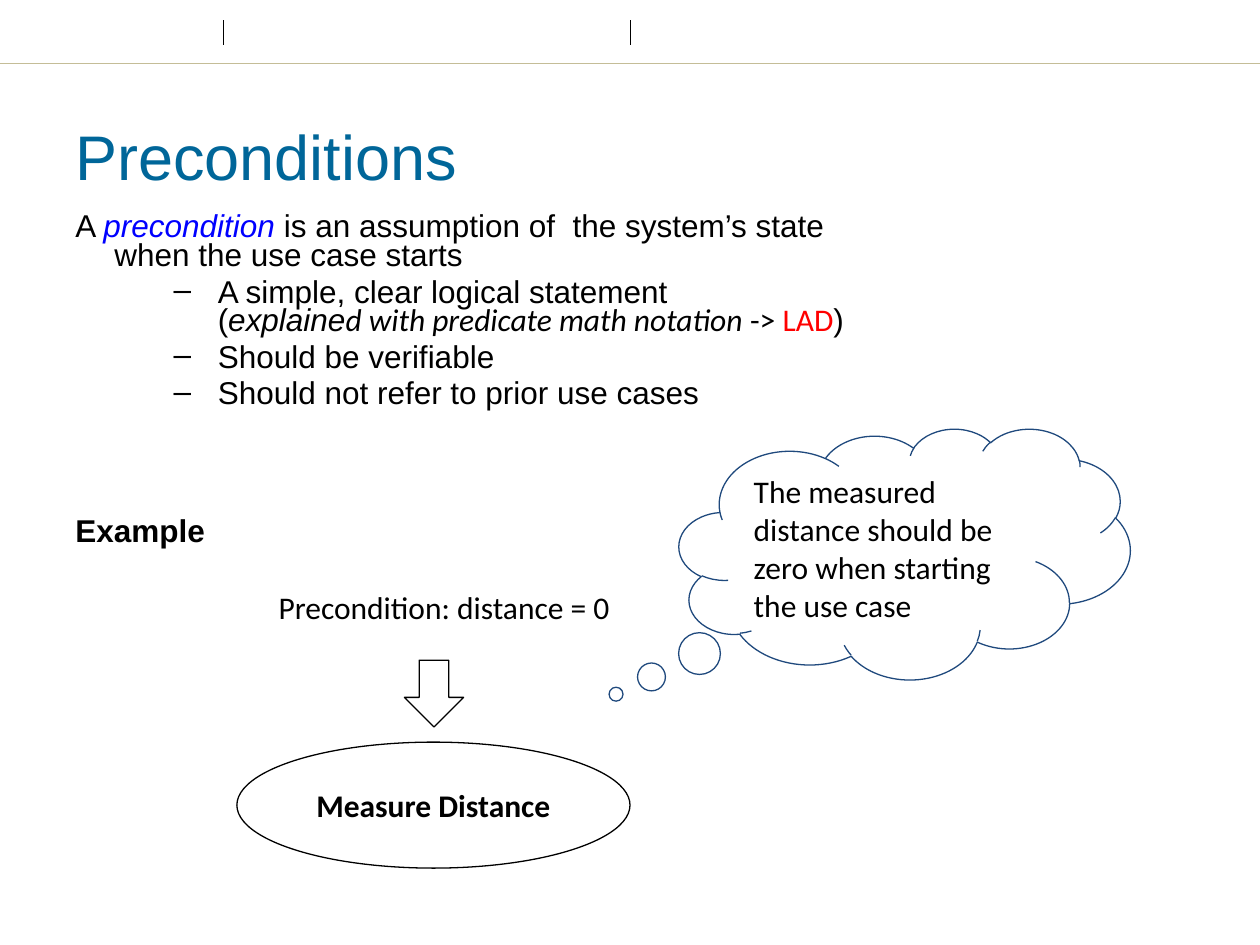
from dataclasses import dataclass
from typing import Optional

from lxml.etree import SubElement
from pptx import Presentation
from pptx.dml.color import RGBColor
from pptx.enum.shapes import MSO_CONNECTOR, MSO_SHAPE
from pptx.enum.text import MSO_ANCHOR, PP_ALIGN
from pptx.oxml.ns import qn
from pptx.util import Inches, Pt

COLUMNS, ROWS = 100, 75
SLIDE_WIDTH, SLIDE_HEIGHT = Inches(10), Inches(7.5)

BLACK = RGBColor(0x00, 0x00, 0x00)
TITLE_BLUE = RGBColor(0x00, 0x66, 0x99)
TERM_BLUE = RGBColor(0x00, 0x00, 0xFF)
RED = RGBColor(0xFF, 0x00, 0x00)
CLOUD_BLUE = RGBColor(0x1F, 0x49, 0x7D)
RULE_TAN = RGBColor(0xC4, 0xBD, 0x97)


@dataclass(frozen=True)
class Box:
    """A rectangle in grid columns and rows."""
    left: float
    top: float
    width: float
    height: float

    def lengths(self) -> tuple:
        return (across(self.left), down(self.top),
                across(self.width), down(self.height))


@dataclass(frozen=True)
class Run:
    text: str
    font: str = "Arial"
    size: float = 18
    color: RGBColor = BLACK
    bold: bool = False
    italic: bool = False


@dataclass(frozen=True)
class Rule:
    start: tuple
    end: tuple
    color: RGBColor
    weight: float


@dataclass(frozen=True)
class Outline:
    """An unfilled shape with an optional label."""
    kind: MSO_SHAPE
    box: Box
    color: RGBColor = BLACK
    adjustments: tuple = ()
    label: Optional[Run] = None
    align: PP_ALIGN = PP_ALIGN.LEFT
    inset: float = 0.05


def across(columns: float) -> int:
    return round(SLIDE_WIDTH * columns / COLUMNS)


def down(rows: float) -> int:
    return round(SLIDE_HEIGHT * rows / ROWS)


def write_paragraph(paragraph, runs, *, align=PP_ALIGN.LEFT, margin=0.0, hanging=0.0,
                    line_spacing=1.0, space_before=0.0, bullet="") -> None:
    """Write runs; a newline inside a run becomes a line break."""
    paragraph.alignment = align
    paragraph.line_spacing = line_spacing
    paragraph.space_before = Pt(space_before)
    properties = paragraph._p.get_or_add_pPr()
    properties.set("marL", str(Inches(margin)))
    properties.set("indent", str(-Inches(hanging)))
    if bullet:
        paragraph.level = 1
        color = SubElement(properties, qn("a:buClr"))
        SubElement(color, qn("a:srgbClr"), val=str(BLACK))
        SubElement(properties, qn("a:buFont"), typeface="Arial")
        SubElement(properties, qn("a:buChar"), char=bullet)
    else:
        SubElement(properties, qn("a:buNone"))
    for item in runs:
        for number, line in enumerate(item.text.split("\n")):
            if number:
                paragraph.add_line_break()
            run = paragraph.add_run()
            run.text = line
            run.font.name = item.font
            run.font.size = Pt(item.size)
            run.font.color.rgb = item.color
            run.font.bold = item.bold
            run.font.italic = item.italic


def prepare_frame(shape, anchor: MSO_ANCHOR, inset: float = 0.05):
    frame = shape.text_frame
    frame.word_wrap = True
    frame.vertical_anchor = anchor
    frame.margin_left = frame.margin_right = Inches(0.1)
    frame.margin_top = frame.margin_bottom = Inches(inset)
    return frame


def add_text(slide, box: Box, *runs: Run, anchor=MSO_ANCHOR.TOP, **layout):
    frame = prepare_frame(slide.shapes.add_textbox(*box.lengths()), anchor)
    write_paragraph(frame.paragraphs[0], runs, **layout)
    return frame


def add_rule(slide, rule: Rule) -> None:
    (x1, y1), (x2, y2) = rule.start, rule.end
    connector = slide.shapes.add_connector(
        MSO_CONNECTOR.STRAIGHT, across(x1), down(y1), across(x2), down(y2))
    connector.line.color.rgb = rule.color
    connector.line.width = Pt(rule.weight)
    SubElement(connector._element.spPr, qn("a:effectLst"))


def add_outline(slide, outline: Outline) -> None:
    shape = slide.shapes.add_shape(outline.kind, *outline.box.lengths())
    shape.shadow.inherit = False
    shape.fill.background()
    shape.line.color.rgb = outline.color
    shape.line.width = Pt(0.75)
    for number, value in enumerate(outline.adjustments):
        shape.adjustments[number] = value
    if outline.label:
        frame = prepare_frame(shape, MSO_ANCHOR.MIDDLE, outline.inset)
        write_paragraph(frame.paragraphs[0], [outline.label], align=outline.align)


RULES = [Rule((0, 5), (COLUMNS, 5), RULE_TAN, 0.25)] + [
    Rule((column, 1.6), (column, 3.6), BLACK, 0.5) for column in (17.7, 50)]

DEFINITION = [
    Run("A "),
    Run("precondition", color=TERM_BLUE, italic=True),
    Run(" is an assumption of  the system’s state \nwhen the use case starts"),
]

QUALITIES = [
    [Run("A simple, clear logical statement \n("),
     Run("explaine", italic=True),
     Run("d with predicate math notation", font="Calibri", italic=True),
     Run(" -> ", font="Calibri"),
     Run("LAD", font="Calibri", color=RED),
     Run(")")],
    [Run("Should be verifiable")],
    [Run("Should not refer to prior use cases")],
]

OUTLINES = [
    Outline(MSO_SHAPE.OVAL, Box(18.8, 58.9, 31.2, 10), align=PP_ALIGN.CENTER,
            label=Run("Measure Distance", font="Calibri", bold=True)),
    Outline(MSO_SHAPE.DOWN_ARROW, Box(32.1, 52.4, 4.7, 5.3), adjustments=(0.5, 0.5)),
    Outline(MSO_SHAPE.CLOUD_CALLOUT, Box(53.9, 34, 35.8, 19.9), CLOUD_BLUE,
            adjustments=(-0.64, 0.56), inset=0.1,
            label=Run("The measured distance should be zero when starting the use case",
                      font="Calibri")),
]


def main() -> None:
    presentation = Presentation()
    presentation.slide_width, presentation.slide_height = SLIDE_WIDTH, SLIDE_HEIGHT
    slide = presentation.slides.add_slide(presentation.slide_layouts[6])

    for rule in RULES:
        add_rule(slide, rule)
    add_text(slide, Box(5, 7.6, 90, 9.4), Run("Preconditions", size=36, color=TITLE_BLUE),
             anchor=MSO_ANCHOR.MIDDLE)
    body = add_text(slide, Box(5, 16.6, 88.9, 20.7), *DEFINITION,
                    margin=0.31, hanging=0.31, line_spacing=0.75)
    for quality in QUALITIES:
        write_paragraph(body.add_paragraph(), quality, margin=1.13, hanging=0.35,
                        line_spacing=0.75, space_before=4.8, bullet="–")
    add_text(slide, Box(5, 40.1, 15.9, 3.8), Run("Example", bold=True))
    add_text(slide, Box(15.2, 46.2, 40.1, 4.6),
             Run("Precondition: distance = 0", font="Calibri"),
             align=PP_ALIGN.CENTER, margin=0.5, hanging=0.5)
    for outline in OUTLINES:
        add_outline(slide, outline)

    presentation.save("out.pptx")


if __name__ == "__main__":
    main()
